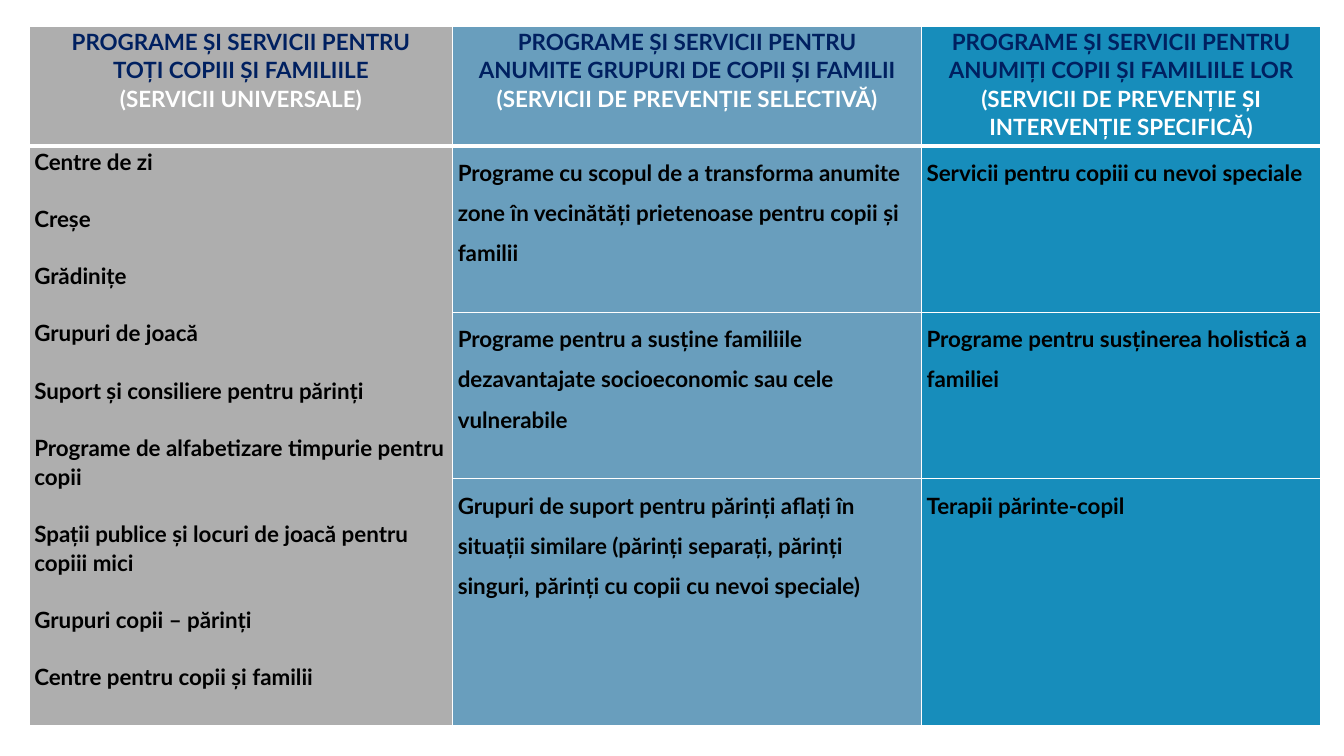
from dataclasses import dataclass

from lxml import etree
from pptx import Presentation
from pptx.dml.color import RGBColor
from pptx.enum.text import MSO_ANCHOR, PP_ALIGN
from pptx.oxml.ns import qn
from pptx.util import Emu, Pt

LEFT, CENTER = PP_ALIGN.LEFT, PP_ALIGN.CENTER
TOP = MSO_ANCHOR.TOP

PX = 9144  # 100 px to the inch
FONT, SIZE = "Lato", 16
TIGHT, LOOSE = 1.07, 1.5  # line spacing
GAP = 20.5  # points between the services of the first column
THIN, THICK = 1, 3  # border widths in points
COLORS = {
    "gray": "AEAEAE",
    "steel": "699EBD",
    "blue": "178DBB",
    "navy": "002060",
    "white": "FFFFFF",
    "black": "000000",
}
ROWS = [119, 165, 165, 245]


@dataclass
class Column:
    width: int
    fill: str
    title: list[str]
    kind: list[str]
    body: list[list[str]]  # paragraphs of each cell; one cell fills the column


COLUMNS = [
    Column(
        420, "gray",
        ["PROGRAME ȘI SERVICII PENTRU", "TOȚI COPIII ȘI FAMILIILE"],
        ["(SERVICII UNIVERSALE)"],
        [[
            "Centre de zi",
            "Creșe",
            "Grădinițe",
            "Grupuri de joacă",
            "Suport și consiliere pentru părinți",
            "Programe de alfabetizare timpurie pentru copii",
            "Spații publice și locuri de joacă pentru copiii mici",
            "Grupuri copii – părinți",
            "Centre pentru copii și familii",
        ]],
    ),
    Column(
        465, "steel",
        ["PROGRAME ȘI SERVICII PENTRU", "ANUMITE GRUPURI DE COPII ȘI FAMILII"],
        ["(SERVICII DE PREVENȚIE SELECTIVĂ)"],
        [
            ["Programe cu scopul de a transforma anumite zone în vecinătăți "
             "prietenoase pentru copii și familii"],
            ["Programe pentru a susține familiile dezavantajate socioeconomic "
             "sau cele vulnerabile"],
            ["Grupuri de suport pentru părinți aflați în situații similare "
             "(părinți separați, părinți singuri, părinți cu copii cu nevoi "
             "speciale)"],
        ],
    ),
    Column(
        396, "blue",
        ["PROGRAME ȘI SERVICII PENTRU ANUMIȚI COPII ȘI FAMILIILE LOR"],
        ["(SERVICII DE PREVENȚIE ȘI INTERVENȚIE SPECIFICĂ)"],
        [
            ["Servicii pentru copiii cu nevoi speciale"],
            ["Programe pentru susținerea holistică a familiei"],
            ["Terapii părinte-copil"],
        ],
    ),
]


def px(value: int) -> Emu:
    return Emu(value * PX)


def rgb(name: str) -> RGBColor:
    return RGBColor.from_string(COLORS[name])


def write(cell, lines: list[tuple[str, str]], align, pitch: float,
          gap: float = 0) -> None:
    """Write (text, color) lines, one paragraph each."""
    frame = cell.text_frame
    for i, (text, color) in enumerate(lines):
        para = frame.paragraphs[0] if i == 0 else frame.add_paragraph()
        para.alignment = align
        para.line_spacing = pitch
        para.space_before = Pt(gap if i else 0)
        run = para.add_run()
        run.text = text
        font = run.font
        font.name, font.size, font.bold = FONT, Pt(SIZE), True
        font.color.rgb = rgb(color)


def border(cell, sides: dict[str, int]) -> None:
    """Draw white cell borders; they come before the fill."""
    props = cell._tc.get_or_add_tcPr()
    for i, (side, width) in enumerate(sides.items()):
        line = etree.Element(qn(f"a:ln{side}"), w=str(Pt(width)))
        fill = etree.SubElement(line, qn("a:solidFill"))
        etree.SubElement(fill, qn("a:srgbClr"), val=COLORS["white"])
        props.insert(i, line)


def style(cell, fill: str, row: int) -> None:
    cell.margin_left = cell.margin_right = px(5)
    cell.margin_top = cell.margin_bottom = 0
    cell.vertical_anchor = TOP
    cell.fill.solid()
    cell.fill.fore_color.rgb = rgb(fill)
    border(cell, {
        "L": THIN,
        "R": THIN,
        "T": THICK if row == 1 else THIN,
        "B": THICK if row == 0 else THIN,
    })


def draw(slide) -> None:
    width = sum(col.width for col in COLUMNS)
    frame = slide.shapes.add_table(
        len(ROWS), len(COLUMNS), px(29), px(26), px(width), px(sum(ROWS)))
    table = frame.table
    table.first_row = table.horz_banding = False
    for row, height in zip(table.rows, ROWS):
        row.height = px(height)

    for c, col in enumerate(COLUMNS):
        table.columns[c].width = px(col.width)
        for r in range(len(ROWS)):
            style(table.cell(r, c), col.fill, r)

        # Heading
        head = [(text, "navy") for text in col.title]
        head += [(text, "white") for text in col.kind]
        write(table.cell(0, c), head, CENTER, TIGHT)

        # Services
        single = len(col.body) == 1
        if single:
            table.cell(1, c).merge(table.cell(len(ROWS) - 1, c))
        for r, texts in enumerate(col.body, 1):
            lines = [(text, "black") for text in texts]
            write(table.cell(r, c), lines, LEFT,
                  TIGHT if single else LOOSE, GAP if single else 0)


def main() -> None:
    deck = Presentation()
    deck.slide_width, deck.slide_height = px(1333), px(750)
    draw(deck.slides.add_slide(deck.slide_layouts[6]))
    deck.save("out.pptx")


if __name__ == "__main__":
    main()
